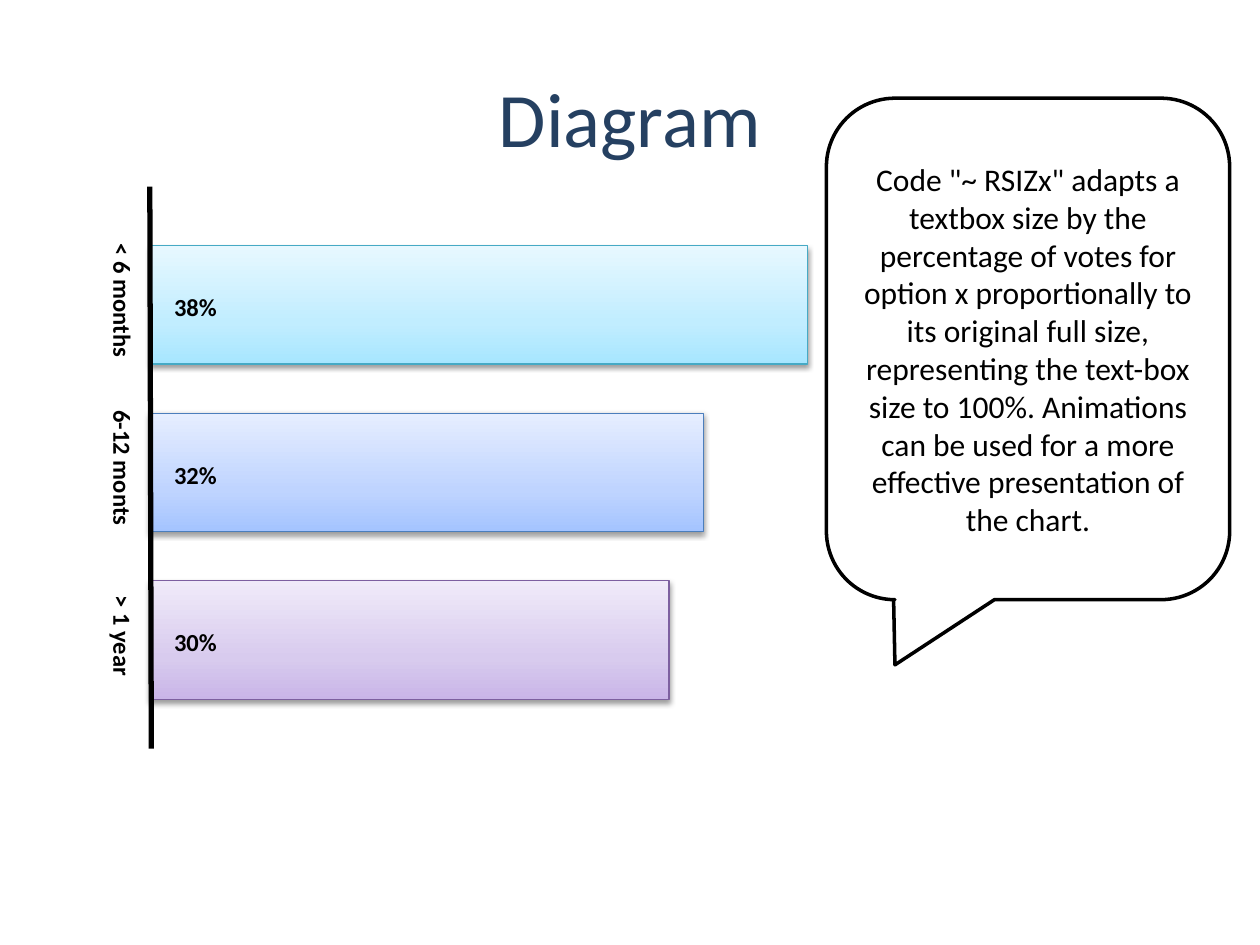
from copy import deepcopy
from dataclasses import dataclass

import pptx
import pptx.dml.color
import pptx.enum.shapes
import pptx.enum.text
import pptx.oxml
import pptx.oxml.ns
import pptx.util
from pptx.util import Cm

MIDDLE = pptx.enum.text.MSO_ANCHOR.MIDDLE
TOP = pptx.enum.text.MSO_ANCHOR.TOP
NAMESPACE = pptx.oxml.ns.nsdecls("a")


@dataclass(frozen=True)
class Theme:
    font: str = "Calibri"
    title_color: str = "254061"
    ink: str = "000000"
    paper: str = "FFFFFF"
    title_size: int = 44
    body_size: int = 18
    label_size: int = 14


@dataclass(frozen=True)
class Bar:
    label: str
    percent: int
    gradient: tuple[str, str, str]
    outline: str


THEME = Theme()
BARS = [
    Bar("< 6 months", 38, ("A7E6FF", "C1EDFF", "E7F8FF"), "46AAC5"),
    Bar("6-12 monts", 32, ("A4C4FF", "BFD4FF", "E6EEFF"), "4B7EBC"),
    Bar("> 1 year", 30, ("C9B5E8", "D8CBEE", "F0EAF9"), "7D60A0"),
]
GRADIENT_POSITIONS = (0, 0.35, 1)
BAR_LEFT, BAR_TOP, BAR_HEIGHT, BAR_PITCH = 3.02, 4.95, 2.39, 3.38
FULL_LENGTH = 34.89
CALLOUT_TEXT = (
    'Code "~ RSIZx" adapts a textbox size by the percentage of votes for option x '
    "proportionally to its original full size, representing the text-box size to 100%. "
    "Animations can be used for a more effective presentation of the chart."
)


def rgb(value: str) -> pptx.dml.color.RGBColor:
    return pptx.dml.color.RGBColor.from_string(value)


def write(shape, text: str, size: int, color: str, anchor=MIDDLE, bold: bool = False) -> None:
    frame = shape.text_frame
    frame.word_wrap = True
    frame.vertical_anchor = anchor
    paragraph = frame.paragraphs[0]
    paragraph.text = text
    paragraph.alignment = pptx.enum.text.PP_ALIGN.CENTER
    font = paragraph.font
    font.name, font.size, font.bold = THEME.font, pptx.util.Pt(size), bold
    font.color.rgb = rgb(color)


def add_bar(slide, bar: Bar, top: float) -> None:
    shape = slide.shapes.add_shape(
        pptx.enum.shapes.MSO_SHAPE.RECTANGLE,
        Cm(BAR_LEFT), Cm(top), Cm(FULL_LENGTH * bar.percent / 100), Cm(BAR_HEIGHT),
    )
    shape.fill.gradient()
    shape.fill.gradient_angle = 90
    properties = shape._element.spPr
    stop_list = properties.find(".//" + pptx.oxml.ns.qn("a:gsLst"))
    stop_list.append(deepcopy(stop_list[0]))
    for stop, position, color in zip(shape.fill.gradient_stops, GRADIENT_POSITIONS, bar.gradient):
        stop.position = position
        stop.color.rgb = rgb(color)
    shape.line.color.rgb = rgb(bar.outline)
    shape.line.width = pptx.util.Pt(0.75)
    properties.append(pptx.oxml.parse_xml(
        f'<a:effectLst {NAMESPACE}><a:outerShdw blurRad="40000" dist="20000" dir="5400000" '
        f'rotWithShape="0"><a:srgbClr val="{THEME.ink}"><a:alpha val="38000"/></a:srgbClr>'
        "</a:outerShdw></a:effectLst>"
    ))


def add_label(slide, text: str, left: float, center: float, width: float, height: float,
              anchor=MIDDLE, rotation: float = 0) -> None:
    shape = slide.shapes.add_textbox(Cm(left), Cm(center - height / 2), Cm(width), Cm(height))
    shape.rotation = rotation
    frame = shape.text_frame
    frame.margin_left = frame.margin_right = frame.margin_top = frame.margin_bottom = 0
    write(shape, text, THEME.label_size, THEME.ink, anchor, bold=True)


def add_axis(slide) -> None:
    axis = slide.shapes.add_connector(
        pptx.enum.shapes.MSO_CONNECTOR.STRAIGHT, Cm(3.05), Cm(15.09), Cm(3.02), Cm(3.76)
    )
    axis.line.color.rgb = rgb(THEME.ink)
    axis.line.width = pptx.util.Pt(3)
    axis._element.spPr.append(pptx.oxml.parse_xml(f"<a:effectLst {NAMESPACE}/>"))


def add_callout(slide) -> None:
    callout = slide.shapes.add_shape(
        pptx.enum.shapes.MSO_SHAPE.ROUNDED_RECTANGULAR_CALLOUT,
        Cm(16.66), Cm(1.98), Cm(8.13), Cm(10.11),
    )
    for index, value in enumerate((-0.33, 0.63, 0.17)):
        callout.adjustments[index] = value
    callout.shadow.inherit = False
    callout.fill.solid()
    callout.fill.fore_color.rgb = rgb(THEME.paper)
    callout.line.color.rgb = rgb(THEME.ink)
    callout.line.width = pptx.util.Pt(2)
    write(callout, CALLOUT_TEXT, THEME.body_size, THEME.ink)


def main() -> None:
    presentation = pptx.Presentation()
    presentation.slide_width, presentation.slide_height = Cm(25.4), Cm(19.05)
    slide = presentation.slides.add_slide(presentation.slide_layouts[5])

    title = slide.shapes.title
    title.left, title.top, title.width, title.height = Cm(1.27), Cm(0.76), Cm(22.86), Cm(3.18)
    write(title, "Diagram", THEME.title_size, THEME.title_color)

    tops = [BAR_TOP + index * BAR_PITCH for index in range(len(BARS))]
    for bar, top in zip(BARS, tops):
        add_bar(slide, bar, top)
    add_axis(slide)
    for bar, top in zip(BARS, tops):
        center = top + BAR_HEIGHT / 2
        add_label(slide, bar.label, 0.51, center - 0.09, 3.35, 1.19, TOP, rotation=90)
        add_label(slide, f"{bar.percent}%", 2.11, center + 0.04, 3.66, 0.99)
    add_callout(slide)

    presentation.save("out.pptx")


if __name__ == "__main__":
    main()
